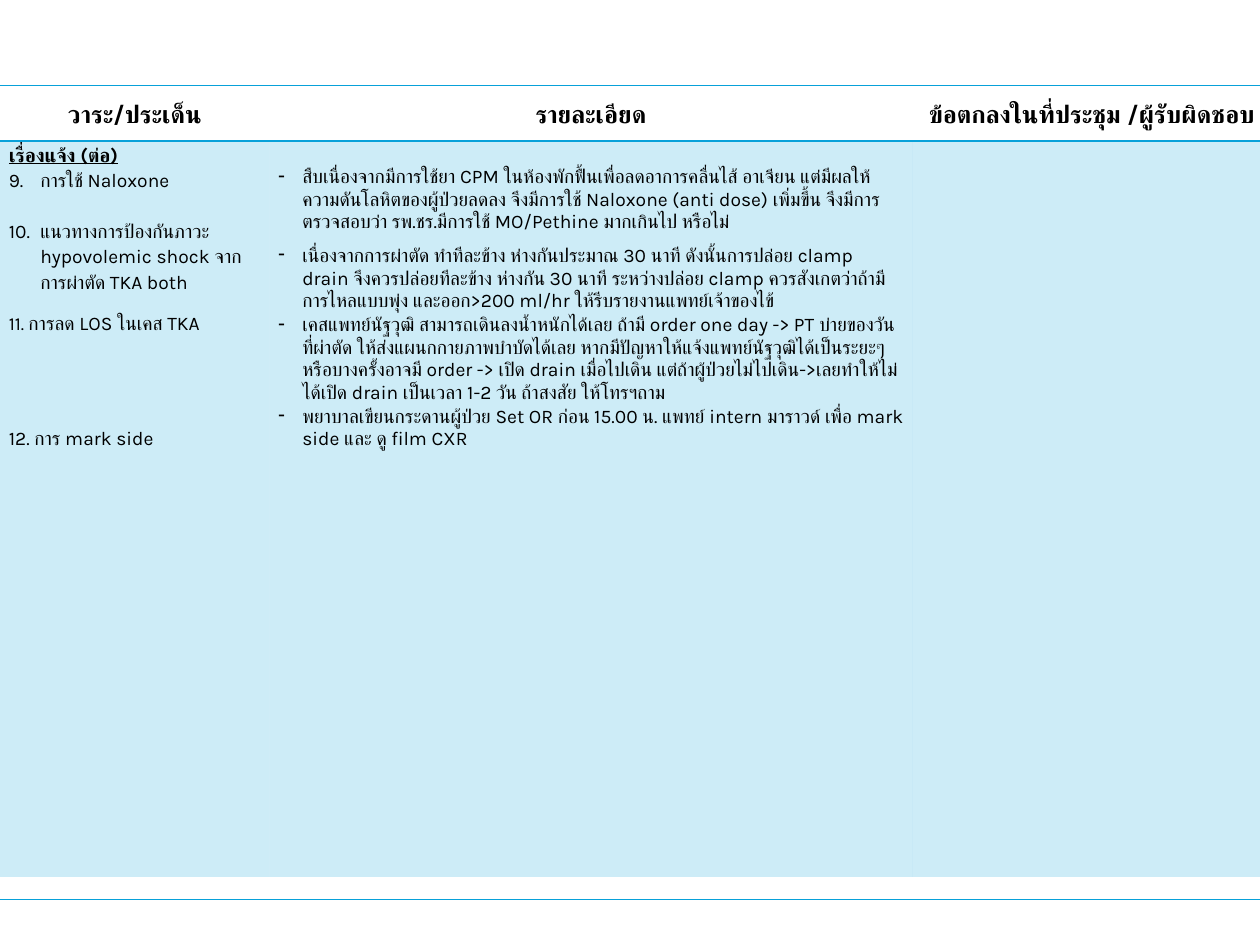
from lxml.etree import SubElement
from pptx import Presentation
from pptx.dml.color import RGBColor
from pptx.enum.text import MSO_ANCHOR as ANCHOR, PP_ALIGN as ALIGN
from pptx.oxml.ns import qn
from pptx.util import Inches, Pt

FONT = "Karla"
BLACK = RGBColor(0x00, 0x00, 0x00)
BLUE = RGBColor(0x08, 0xA1, 0xD9)
PLAIN_STYLE = "{2D5ABB26-0587-4C30-8999-92F81FD0307C}"

COLS = [2.14, 5.1, 2.85]
ROWS = [0.44, 5.84, 0.18]
TOP = 0.68

HEADERS = ["วาระ/ประเด็น", "รายละเอียด", "ข้อตกลงในที่ประชุม /ผู้รับผิดชอบ"]

DASH = ("buChar", {"char": "-"})
NUMBER = ("buAutoNum", {"type": "arabicPeriod", "startAt": "9"})

# Each entry: runs as (text, size), bullet, space before in points
TOPICS = [
    ([("การใช้ Naloxone", 11)], NUMBER, 0),
    ([("แนวทางการป้องกันภาวะ hypovolemic shock จากการผ่าตัด TKA both", 11)],
     NUMBER, 14),
    ([("11. ", 10.5), ("การลด LOS ในเคส TKA", 11)], None, 8.5),
    ([("12. การ mark side", 11)], None, 51),
]

# Each entry: text, space before in points
DETAILS = [
    ("สืบเนื่องจากมีการใช้ยา CPM ในห้องพักฟื้นเพื่อลดอาการคลื่นไส้ อาเจียน "
     "แต่มีผลให้ความดันโลหิตของผู้ป่วยลดลง จึงมีการใช้ Naloxone (anti dose) เพิ่มขึ้น "
     "จึงมีการตรวจสอบว่า รพ.ชร.มีการใช้ MO/Pethine มากเกินไป หรือไม่", 0),
    ("เนื่องจากการผ่าตัด ทำทีละข้าง ห่างกันประมาณ 30 นาที ดังนั้นการปล่อย clamp drain "
     "จึงควรปล่อยทีละข้าง ห่างกัน 30 นาที ระหว่างปล่อย clamp "
     "ควรสังเกตว่าถ้ามีการไหลแบบพุ่ง และออก>200 ml/hr ให้รีบรายงานแพทย์เจ้าของไข้", 6.5),
    ("เคสแพทย์นัฐวุฒิ สามารถเดินลงน้ำหนักได้เลย ถ้ามี order one day -> PT "
     "บ่ายของวันที่ผ่าตัด ให้ส่งแผนกกายภาพบำบัดได้เลย "
     "หากมีปัญหาให้แจ้งแพทย์นัฐวุฒิได้เป็นระยะๆ หรือบางครั้งอาจมี order -> "
     "เปิด drain เมื่อไปเดิน แต่ถ้าผู้ป่วยไม่ไปเดิน->เลยทำให้ไม่ได้เปิด drain "
     "เป็นเวลา 1-2 วัน ถ้าสงสัย ให้โทรฯถาม", 1),
    ("พยาบาลเขียนกระดานผู้ป่วย Set OR ก่อน 15.00 น. แพทย์ intern มาราวด์ เพื่อ "
     "mark side และ ดู film CXR", 1),
]


def add_run(p, text, size, bold=False, underline=False):
    r = p.add_run()
    r.text = text
    font = r.font
    font.name, font.size, font.bold = FONT, Pt(size), bold
    font.underline = underline
    font.color.rgb = BLACK
    SubElement(font._element, qn("a:cs"), typeface=FONT)


def set_bullet(p, bullet, hang):
    pPr = p._p.get_or_add_pPr()
    pPr.set("marL", str(Inches(hang)))
    pPr.set("indent", str(-Inches(hang)))
    tag, attrs = bullet
    SubElement(pPr, qn(f"a:{tag}"), **attrs)


def set_spacing(p, line=None, before=0):
    if line:
        p.line_spacing = line
    if before:
        p.space_before = Pt(before)


def draw_edge(cell, side):
    ln = SubElement(cell._tc.get_or_add_tcPr(), qn(f"a:ln{side}"), w=str(Pt(1)))
    fill = SubElement(ln, qn("a:solidFill"))
    SubElement(fill, qn("a:srgbClr"), val=str(BLUE))


def tint(cell):
    cell.fill.solid()
    cell.fill.fore_color.rgb = BLUE
    colour = cell._tc.tcPr.find(".//" + qn("a:srgbClr"))
    SubElement(colour, qn("a:alpha"), val="20000")


def add_grid(s):
    frame = s.shapes.add_table(len(ROWS), len(COLS), 0, Inches(TOP),
                               Inches(sum(COLS)), Inches(sum(ROWS)))
    table = frame.table
    table.first_row = table.horz_banding = False
    table._tbl.tblPr.find(qn("a:tableStyleId")).text = PLAIN_STYLE
    for col, width in zip(table.columns, COLS):
        col.width = Inches(width)
    for row, height in zip(table.rows, ROWS):
        row.height = Inches(height)
    for cell in table.iter_cells():
        cell.margin_left = cell.margin_right = Inches(0.07)
        cell.margin_top = cell.margin_bottom = 0
    return table


def fill_header(cell, text):
    cell.vertical_anchor = ANCHOR.MIDDLE
    draw_edge(cell, "T")
    draw_edge(cell, "B")
    cell.fill.background()
    p = cell.text_frame.paragraphs[0]
    p.alignment = ALIGN.CENTER
    set_spacing(p, 1.15)
    add_run(p, text, 14, bold=True)


def fill_topics(cell):
    tf = cell.text_frame
    p = tf.paragraphs[0]
    set_spacing(p, 1.15)
    add_run(p, "เรื่องแจ้ง (ต่อ)", 11, bold=True, underline=True)
    for runs, bullet, before in TOPICS:
        p = tf.add_paragraph()
        if bullet:
            set_bullet(p, bullet, 0.25)
        set_spacing(p, 1.15, before)
        for text, size in runs:
            add_run(p, text, size)


def fill_details(cell):
    cell.margin_top = Inches(0.2)
    tf = cell.text_frame
    for i, (text, before) in enumerate(DETAILS):
        p = tf.add_paragraph() if i else tf.paragraphs[0]
        set_bullet(p, DASH, 0.19)
        set_spacing(p, before=before)
        add_run(p, text, 11)


def close_row(cell):
    draw_edge(cell, "B")
    cell.fill.background()
    # A small paragraph size lets the thin row keep its height
    SubElement(cell.text_frame.paragraphs[0]._p, qn("a:endParaRPr"), sz="800")


def main():
    prs = Presentation()
    prs.slide_width, prs.slide_height = Inches(10), Inches(7.5)
    s = prs.slides.add_slide(prs.slide_layouts[6])
    table = add_grid(s)

    # Header row and closing row
    for c, text in enumerate(HEADERS):
        fill_header(table.cell(0, c), text)
        close_row(table.cell(2, c))

    # Body row
    for c in range(len(COLS)):
        tint(table.cell(1, c))
    fill_topics(table.cell(1, 0))
    fill_details(table.cell(1, 1))

    prs.save("out.pptx")


if __name__ == "__main__":
    main()
